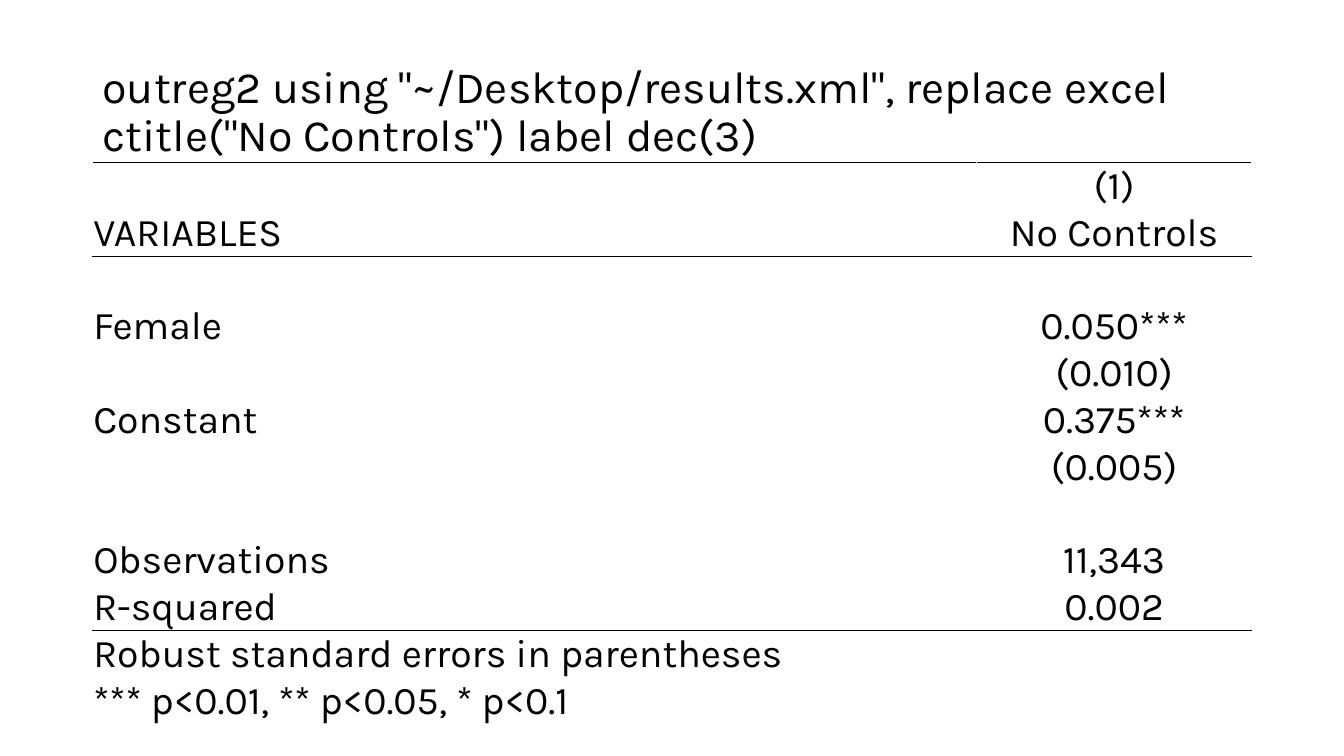
from lxml import etree
from pptx import Presentation
from pptx.dml.color import RGBColor
from pptx.enum.text import MSO_ANCHOR, MSO_AUTO_SIZE, PP_ALIGN
from pptx.oxml.ns import qn
from pptx.util import Cm, Pt

BLACK = RGBColor(0x00, 0x00, 0x00)
LEFT, CENTER = PP_ALIGN.LEFT, PP_ALIGN.CENTER
MIDDLE, BOTTOM = MSO_ANCHOR.MIDDLE, MSO_ANCHOR.BOTTOM
NO_AUTOFIT = MSO_AUTO_SIZE.NONE
TITLE_ONLY = 5
RULE_WIDTH = Pt(0.5)

TITLE = 'outreg2 using "~/Desktop/results.xml", replace excel ctitle("No Controls") label dec(3)'
RESULTS = [
    ("", "(1)"),
    ("VARIABLES", "No Controls"),
    ("", ""),
    ("Female", "0.050***"),
    ("", "(0.010)"),
    ("Constant", "0.375***"),
    ("", "(0.005)"),
    ("", ""),
    ("Observations", "11,343"),
    ("R-squared", "0.002"),
    ("Robust standard errors in parentheses", ""),
    ("*** p<0.01, ** p<0.05, * p<0.1", ""),
]
RULES = {0: "a:lnT", 1: "a:lnB", 2: "a:lnT", 9: "a:lnB", 10: "a:lnT"}
ALIGNMENTS = (LEFT, CENTER)
CELL_FORMAT = {
    "vertical_anchor": BOTTOM,
    "margin_left": Cm(0.02),
    "margin_right": Cm(0.02),
    "margin_top": Cm(0.02),
    "margin_bottom": 0,
}


def set_attrs(obj, values):
    for name, value in values.items():
        setattr(obj, name, value)


def write(p, text, size, alignment):
    p.alignment = alignment
    if text:
        r = p.add_run()
        r.text = text
        set_attrs(r.font, {"name": "Karla", "size": Pt(size)})
        r.font.color.rgb = BLACK


def add_rule(cell, side):
    ln = etree.Element(qn(side), w=str(RULE_WIDTH))
    fill = etree.SubElement(ln, qn("a:solidFill"))
    etree.SubElement(fill, qn("a:srgbClr"), val=str(BLACK))
    cell._tc.get_or_add_tcPr().insert(0, ln)


def add_title(s, left, top, width, height):
    sp = s.shapes.title
    set_attrs(sp, {"left": left, "top": top, "width": width, "height": height})
    tf = sp.text_frame
    set_attrs(tf, {"vertical_anchor": MIDDLE, "word_wrap": True, "auto_size": NO_AUTOFIT})
    p = tf.paragraphs[0]
    write(p, TITLE, 32, LEFT)
    p.line_spacing = 0.9


def add_results(s, left, top, width, height):
    frame = s.shapes.add_table(len(RESULTS), 2, left, top, width, height)
    table = frame.table
    set_attrs(table, {"first_row": False, "horz_banding": False})
    value_width = Cm(6.93)
    table.columns[0].width = width - value_width
    table.columns[1].width = value_width
    for i, texts in enumerate(RESULTS):
        for j, text in enumerate(texts):
            cell = table.cell(i, j)
            set_attrs(cell, CELL_FORMAT)
            cell.fill.background()
            write(cell.text_frame.paragraphs[0], text, 28, ALIGNMENTS[j])
            if i in RULES:
                add_rule(cell, RULES[i])


def main():
    prs = Presentation()
    prs.slide_width, prs.slide_height = Cm(33.87), Cm(19.05)
    s = prs.slides.add_slide(prs.slide_layouts[TITLE_ONLY])
    left, width = Cm(2.33), Cm(29.21)
    add_title(s, left, Cm(1.01), width, Cm(3.68))
    add_results(s, left, Cm(4.09), width, Cm(1.18) * len(RESULTS))
    prs.save("out.pptx")


if __name__ == "__main__":
    main()
